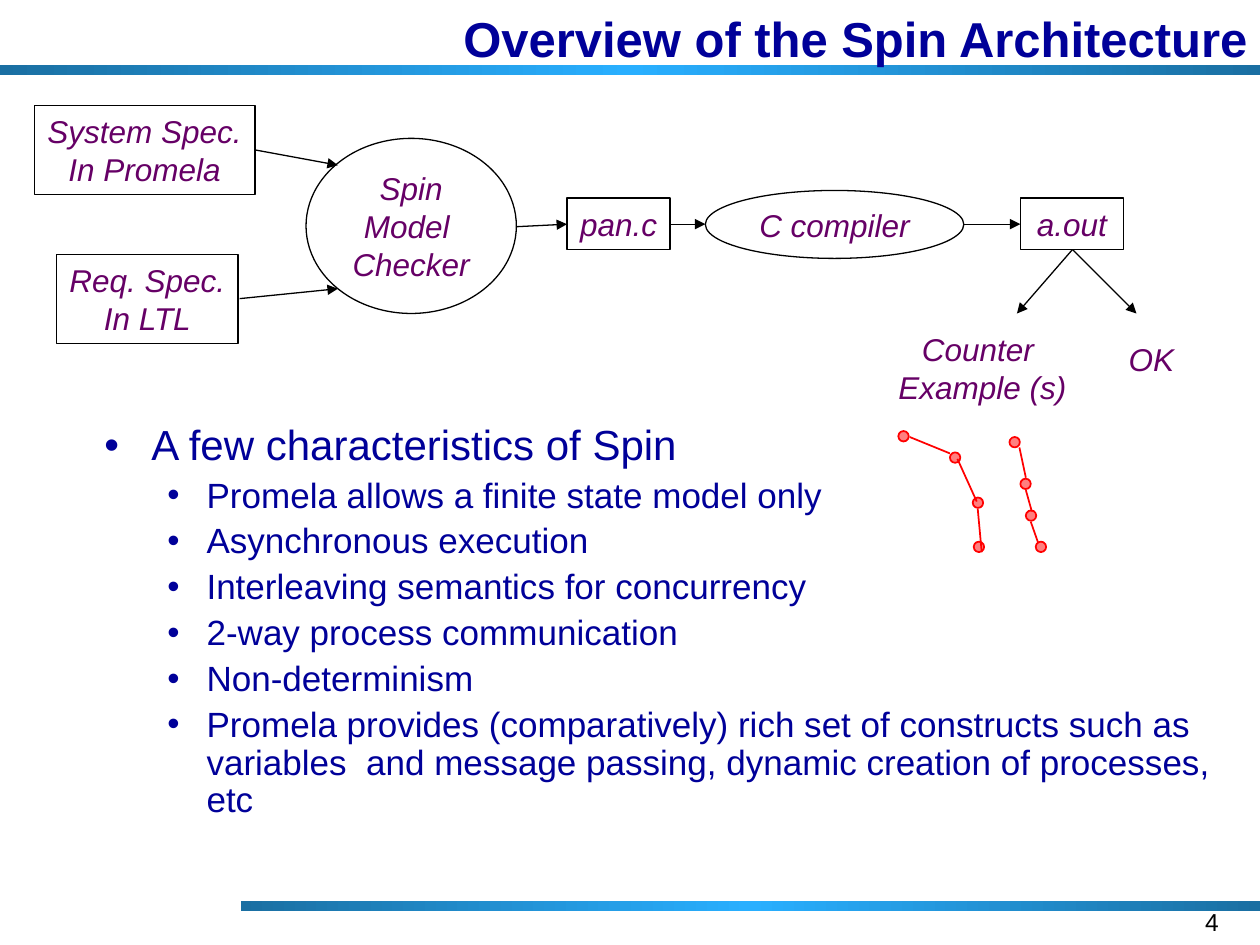
from copy import deepcopy

from lxml import etree
from pptx import Presentation
from pptx.dml.color import RGBColor
from pptx.enum.shapes import MSO_CONNECTOR, MSO_SHAPE
from pptx.enum.text import MSO_ANCHOR, MSO_AUTO_SIZE, PP_ALIGN
from pptx.oxml.ns import qn
from pptx.util import Cm, Pt

RECTANGLE, OVAL = MSO_SHAPE.RECTANGLE, MSO_SHAPE.OVAL
DOT = MSO_SHAPE.FLOWCHART_CONNECTOR
STRAIGHT = MSO_CONNECTOR.STRAIGHT
MIDDLE, TOP = MSO_ANCHOR.MIDDLE, MSO_ANCHOR.TOP
CENTER, RIGHT = PP_ALIGN.CENTER, PP_ALIGN.RIGHT

COLORS = {
    "text": "000099",
    "label": "660066",
    "outline": "000000",
    "trace": "FF0000",
    "bar edge": "1A6FA2",
    "bar middle": "29AFFF",
}


def write(shape, lines, size, color, align=None, anchor=TOP, wrap=True, bold=None, italic=None):
    """Fill a shape with one paragraph per line, all in the same font."""
    frame = shape.text_frame
    frame.text = "\n".join(lines)
    frame.auto_size = MSO_AUTO_SIZE.NONE
    frame.word_wrap = wrap
    frame.vertical_anchor = anchor
    for paragraph in frame.paragraphs:
        paragraph.alignment = align
        font = paragraph.font
        font.name, font.size = "Arial", Pt(size)
        font.bold, font.italic = bold, italic
        font.color.rgb = RGBColor.from_string(COLORS[color])


def add_line(start, end, color, width, arrow=False):
    line = slide.shapes.add_connector(STRAIGHT, *map(Cm, start + end))
    line.line.color.rgb = RGBColor.from_string(COLORS[color])
    line.line.width = Pt(width)
    properties = line._element.spPr
    if arrow:
        etree.SubElement(properties.find(qn("a:ln")), qn("a:tailEnd"), type="triangle", w="med", len="med")
    etree.SubElement(properties, qn("a:effectLst"))


presentation = Presentation()
presentation.slide_width, presentation.slide_height = Cm(25.4), Cm(19.05)
slide = presentation.slides.add_slide(presentation.slide_layouts[1])

# Gradient bars, behind the text
for left, top, width in [(0, 1.32, 25.4), (4.85, 18.16, 20.55)]:
    bar = slide.shapes.add_shape(RECTANGLE, Cm(left), Cm(top), Cm(width), Cm(0.2))
    bar.shadow.inherit = False
    bar.line.fill.background()
    bar.fill.gradient()
    bar.fill.gradient_angle = 0
    stop_list = bar._element.spPr.find(qn("a:gradFill")).find(qn("a:gsLst"))
    stop_list.append(deepcopy(stop_list[0]))
    for stop, position, color in zip(bar.fill.gradient_stops, (0, 0.5, 1), ("bar edge", "bar middle", "bar edge")):
        stop.position = position
        stop.color.rgb = RGBColor.from_string(COLORS[color])
    slide.shapes._spTree.insert(2, bar._element)

# Title
title = slide.shapes.title
title.left, title.top, title.width, title.height = Cm(2.54), Cm(0), Cm(22.86), Cm(1.52)
write(title, ["Overview of the Spin Architecture"], 28, "text", RIGHT, MIDDLE, bold=True)

# Bulleted list
body = slide.placeholders[1]
body.left, body.top, body.width, body.height = Cm(1.85), Cm(8.43), Cm(22.86), Cm(9.02)
write(body, [
    "A few characteristics of Spin",
    "Promela allows a finite state model only",
    "Asynchronous execution",
    "Interleaving semantics for concurrency",
    "2-way process communication",
    "Non-determinism",
    "Promela provides (comparatively) rich set of constructs such as variables  and message passing, "
    "dynamic creation of processes, etc",
], 20, "text")
for index, paragraph in enumerate(body.text_frame.paragraphs):
    first = index == 0
    paragraph.level = 0 if first else 1
    paragraph.font.size = Pt(24 if first else 20)
    paragraph.line_spacing = 0.9
    paragraph.space_before = Pt(0 if first else 4.6)
    properties = paragraph._p.get_or_add_pPr()
    properties.set("marL", str(Cm(0.95 if first else 2.06)))
    properties.set("indent", str(Cm(-0.95 if first else -0.79)))
    bullet = etree.Element(qn("a:buChar"), char="•")
    properties.find(qn("a:defRPr")).addprevious(bullet)

# Slide number
number = slide.shapes.add_textbox(Cm(18.9), Cm(18.16), Cm(5.92), Cm(0.89))
write(number, ["4"], 14, "outline", RIGHT)

# Tool chain
STEPS = [
    (RECTANGLE, 0.69, 2.13, 4.45, 1.8, ["System Spec.", "In Promela"], False),
    (RECTANGLE, 1.14, 5.13, 3.66, 1.8, ["Req. Spec.", "In LTL"], False),
    (OVAL, 6.17, 2.79, 4.24, 3.53, ["Spin Model ", "Checker"], True),
    (RECTANGLE, 11.43, 3.99, 2.08, 1.04, ["pan.c"], False),
    (OVAL, 14.22, 3.84, 5.21, 1.37, ["C compiler"], True),
    (RECTANGLE, 20.57, 3.99, 2.08, 1.04, ["a.out"], False),
]
for kind, left, top, width, height, lines, wrap in STEPS:
    step = slide.shapes.add_shape(kind, Cm(left), Cm(top), Cm(width), Cm(height))
    step.shadow.inherit = False
    step.fill.background()
    step.line.color.rgb = RGBColor.from_string(COLORS["outline"])
    step.line.width = Pt(0.75)
    write(step, lines, 18, "label", CENTER, MIDDLE, wrap, italic=True)

ARROWS = [
    ((5.13, 3.02), (6.81, 3.33)),
    ((4.83, 6.02), (6.81, 5.82)),
    ((10.41, 4.57), (11.43, 4.52)),
    ((13.51, 4.52), (14.22, 4.52)),
    ((19.43, 4.52), (20.57, 4.52)),
    ((21.62, 5.03), (20.5, 6.32)),
    ((21.62, 5.03), (22.91, 6.32)),
]
for start, end in ARROWS:
    add_line(start, end, "outline", 0.75, arrow=True)

# Results of a run
RESULTS = [
    (22.5, 6.73, 1.42, 1.02, ["OK"]),
    (17.86, 6.53, 3.89, 1.78, ["Counter ", "Example (s)"]),
]
for left, top, width, height, lines in RESULTS:
    result = slide.shapes.add_textbox(Cm(left), Cm(top), Cm(width), Cm(height))
    write(result, lines, 18, "label", CENTER, wrap=False, italic=True)

# Counterexample traces
STATES = [
    (20.35, 8.81), (20.57, 9.65), (20.68, 10.29), (20.88, 10.92),
    (18.11, 8.69), (19.15, 9.12), (19.61, 10.03), (19.63, 10.92),
]
for left, top in STATES:
    state = slide.shapes.add_shape(DOT, Cm(left), Cm(top), Cm(0.21), Cm(0.21))
    state.shadow.inherit = False
    state.fill.solid()
    state.fill.fore_color.rgb = RGBColor.from_string(COLORS["trace"])
    fill_color = state._element.spPr.find(qn("a:solidFill"))[0]
    etree.SubElement(fill_color, qn("a:alpha"), val="50000")
    state.line.color.rgb = RGBColor.from_string(COLORS["trace"])
    state.line.width = Pt(1)

TRANSITIONS = [
    ((20.55, 9.02), (20.68, 9.63)),
    ((20.68, 9.88), (20.8, 10.31)),
    ((20.78, 10.52), (20.93, 10.95)),
    ((18.34, 8.81), (19.15, 9.14)),
    ((19.3, 9.25), (19.69, 10.11)),
    ((19.71, 10.26), (19.79, 11.13)),
]
for start, end in TRANSITIONS:
    add_line(start, end, "trace", 1)

presentation.save("out.pptx")
